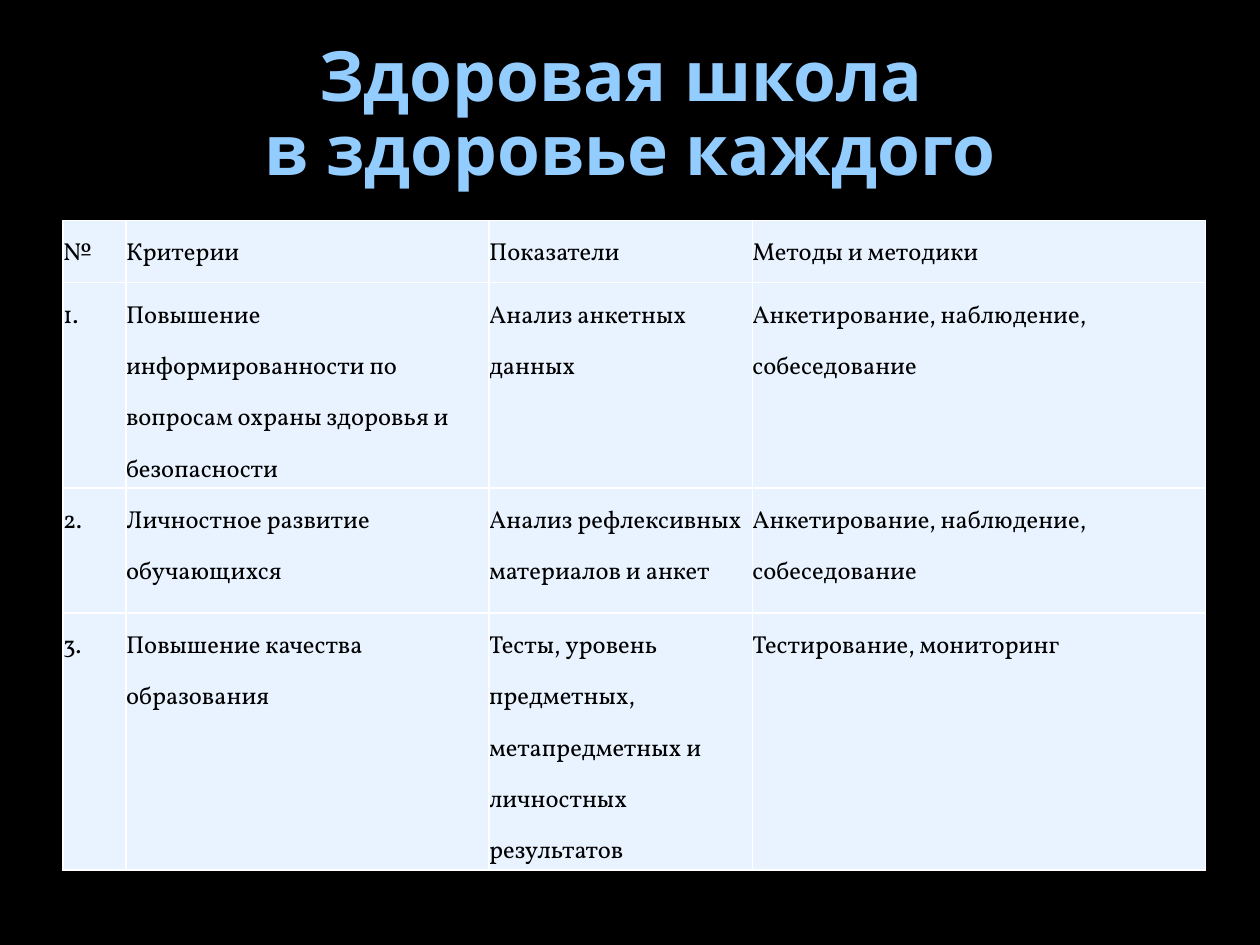
"""Build a slide with a title and a table of healthy-school criteria."""
from dataclasses import dataclass
from lxml import etree
from pptx import Presentation
from pptx import util as u
from pptx.dml.color import RGBColor
from pptx.enum import text
from pptx.oxml.ns import qn


@dataclass(frozen=True)
class Theme:
    background: str = "000000"
    title: str = "93CDFF"
    ink: str = "000000"
    cell: str = "E8F3FF"
    border: str = "FFFFFF"
    title_font: str = "Open Sans"
    body_font: str = "Vollkorn"
    title_size: float = 39.6
    body_size: float = 14


@dataclass(frozen=True)
class Criterion:
    number: str
    name: str
    indicators: str
    methods: str

    def texts(self) -> tuple[str, ...]:
        return self.number, self.name, self.indicators, self.methods


THEME = Theme()
COLUMNS = (36, 207.5, 150.5, 259)
ROWS = (35.5, 107.5, 71.5, 134)
CRITERIA = (
    Criterion("№", "Критерии", "Показатели", "Методы и методики"),
    Criterion("1.", "Повышение информированности по вопросам охраны здоровья и безопасности",
              "Анализ анкетных данных", "Анкетирование, наблюдение, собеседование"),
    Criterion("2.", "Личностное развитие обучающихся",
              "Анализ рефлексивных материалов и анкет", "Анкетирование, наблюдение, собеседование"),
    Criterion("3.", "Повышение качества образования",
              "Тесты, уровень предметных, метапредметных и личностных результатов",
              "Тестирование, мониторинг"),
)


def write(tf, content: str, *, font: str, size: float, color: str,
          align=None, spacing: float = 1.0, bold: bool = False) -> None:
    tf.margin_left = tf.margin_right = tf.margin_top = tf.margin_bottom = 0
    p = tf.paragraphs[0]
    p.text = content
    p.alignment, p.line_spacing = align, spacing
    for r in p.runs:
        r.font.name, r.font.size, r.font.bold = font, u.Pt(size), bold
        r.font.color.rgb = RGBColor.from_string(color)


def set_borders(cell, color: str, width: float) -> None:
    tc_pr = cell._tc.get_or_add_tcPr()
    for i, side in enumerate(("lnL", "lnR", "lnT", "lnB")):
        ln = etree.Element(qn(f"a:{side}"), w=str(u.Pt(width)))
        fill = etree.SubElement(ln, qn("a:solidFill"))
        etree.SubElement(fill, qn("a:srgbClr"), val=color)
        tc_pr.insert(i, ln)


def add_title(slide, content: str) -> None:
    sp = slide.shapes.title
    sp.left, sp.top, sp.width, sp.height = map(u.Pt, (36, 21.6, 648, 90))
    tf = sp.text_frame
    tf.word_wrap, tf.auto_size = True, text.MSO_AUTO_SIZE.NONE
    tf.vertical_anchor = text.MSO_ANCHOR.MIDDLE
    write(tf, content, font=THEME.title_font, size=THEME.title_size, color=THEME.title,
          align=text.PP_ALIGN.CENTER, spacing=0.88, bold=True)


def add_criteria_table(slide, criteria: tuple[Criterion, ...]) -> None:
    table = slide.shapes.add_table(len(ROWS), len(COLUMNS), u.Pt(36), u.Pt(126),
                                   u.Pt(sum(COLUMNS)), u.Pt(sum(ROWS))).table
    for column, width in zip(table.columns, COLUMNS):
        column.width = u.Pt(width)
    for i, (row, height, criterion) in enumerate(zip(table.rows, ROWS, criteria)):
        row.height = u.Pt(height)
        for j, (cell, content) in enumerate(zip(row.cells, criterion.texts())):
            justified = i == 0 or j == 0
            cell.margin_left = cell.margin_right = cell.margin_top = cell.margin_bottom = 0
            cell.fill.solid()
            cell.fill.fore_color.rgb = RGBColor.from_string(THEME.cell)
            set_borders(cell, THEME.border, 1)
            write(cell.text_frame, content, font=THEME.body_font, size=THEME.body_size,
                  color=THEME.ink, spacing=1.5,
                  align=text.PP_ALIGN.JUSTIFY if justified else text.PP_ALIGN.LEFT)


def main() -> None:
    prs = Presentation()
    prs.slide_width, prs.slide_height = u.Pt(720), u.Pt(540)
    slide = prs.slides.add_slide(prs.slide_layouts[5])
    slide.background.fill.solid()
    slide.background.fill.fore_color.rgb = RGBColor.from_string(THEME.background)
    add_title(slide, "Здоровая школа \vв здоровье каждого")
    add_criteria_table(slide, CRITERIA)
    prs.save("out.pptx")


if __name__ == "__main__":
    main()
